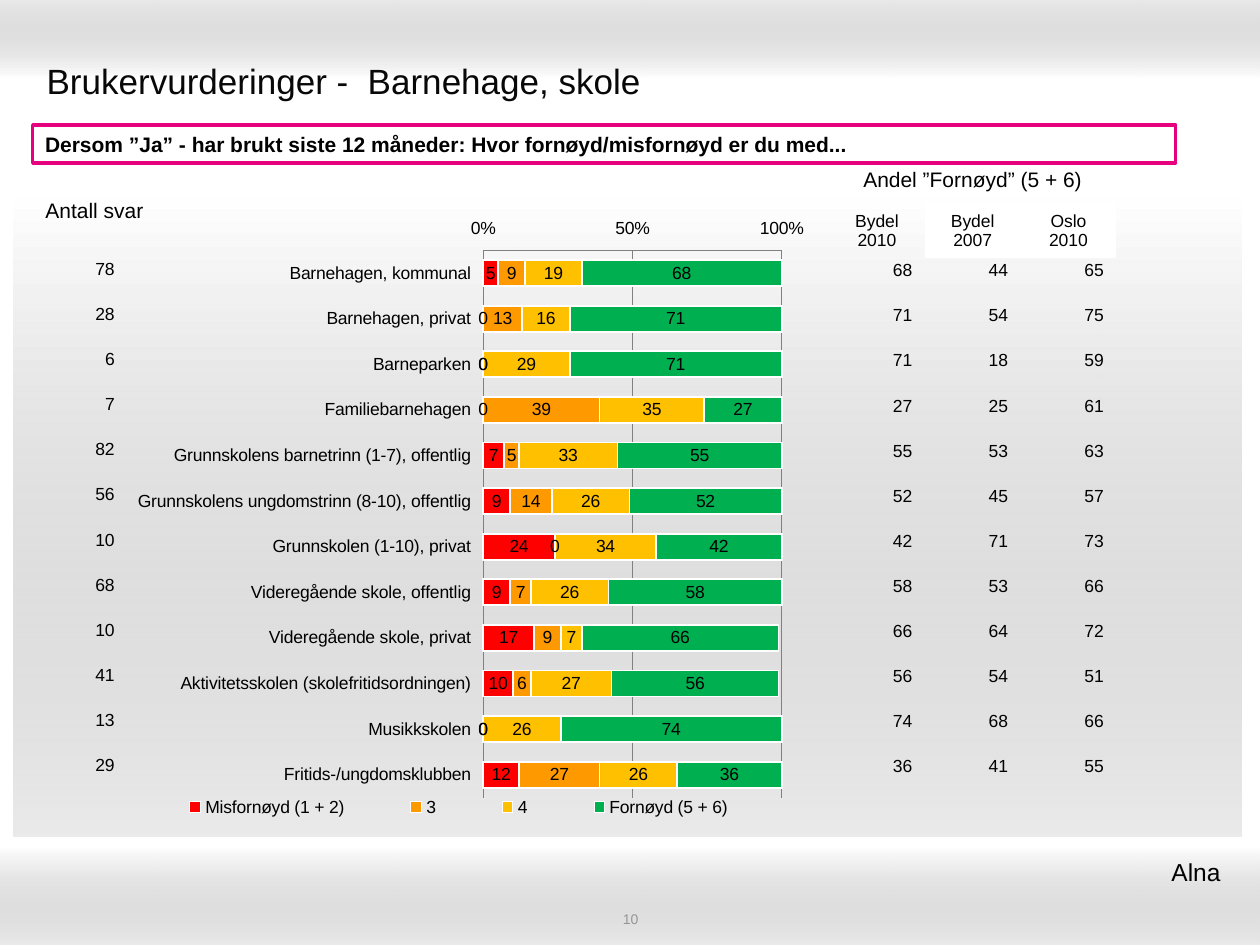
from dataclasses import dataclass

from lxml import etree
from pptx import Presentation, util as u
from pptx.chart.data import CategoryChartData
from pptx.dml.color import RGBColor
from pptx.enum import chart as ch, shapes, text
from pptx.oxml.ns import qn

CELL = 0.1  # the slide is a grid of 100 columns by 75 rows
ROW = 3.58  # height of one answer row
COL = 7.6  # width of one share column
LEFT, CENTER, RIGHT = text.PP_ALIGN.LEFT, text.PP_ALIGN.CENTER, text.PP_ALIGN.RIGHT
NO_STYLE = "{2D5ABB26-0587-4C30-8999-92F81FD0307C}"


@dataclass(frozen=True)
class Theme:
    font: str = "Arial"
    ink: str = "000000"
    title_ink: str = "080808"
    muted: str = "969696"
    white: str = "FFFFFF"
    shade: str = "999999"
    accent: str = "E7007E"
    grid: str = "808080"
    title: int = 20
    place: int = 14
    heading: int = 12
    body: int = 10
    small: int = 8


T = Theme()

# label, number of answers, chart shares, earlier and city-wide satisfied shares
ANSWERS = [
    ("Barnehagen, kommunal", 78, (5, 9, 19, 68), (44, 65)),
    ("Barnehagen, privat", 28, (0, 13, 16, 71), (54, 75)),
    ("Barneparken", 6, (0, 0, 29, 71), (18, 59)),
    ("Familiebarnehagen", 7, (0, 39, 35, 27), (25, 61)),
    ("Grunnskolens barnetrinn (1-7), offentlig", 82, (7, 5, 33, 55), (53, 63)),
    ("Grunnskolens ungdomstrinn (8-10), offentlig", 56, (9, 14, 26, 52), (45, 57)),
    ("Grunnskolen (1-10), privat", 10, (24, 0, 34, 42), (71, 73)),
    ("Videregående skole, offentlig", 68, (9, 7, 26, 58), (53, 66)),
    ("Videregående skole, privat", 10, (17, 9, 7, 66), (64, 72)),
    ("Aktivitetsskolen (skolefritidsordningen)", 41, (10, 6, 27, 56), (54, 51)),
    ("Musikkskolen", 13, (0, 0, 26, 74), (68, 66)),
    ("Fritids-/ungdomsklubben", 29, (12, 27, 26, 36), (41, 55)),
]
SERIES = [("Misfornøyd (1 + 2)", "FF0000"), ("3", "FF9900"),
          ("4", "FFC000"), ("Fornøyd (5 + 6)", "00B050")]


def box(*cells):
    return [u.Inches(c * CELL) for c in cells]


def rgb(value):
    return RGBColor.from_string(value)


def set_all(obj, **values):
    for name, value in values.items():
        setattr(obj, name, value)


def style_font(font, size, color=T.ink, bold=False):
    set_all(font, name=T.font, size=u.Pt(size), bold=bold)
    font.color.rgb = rgb(color)


def write(tf, words, size, color=T.ink, align=LEFT, bold=False):
    tf.text = words
    set_all(tf, word_wrap=True, vertical_anchor=text.MSO_ANCHOR.MIDDLE)
    for p in tf.paragraphs:
        p.alignment = align
        style_font(p.font, size, color, bold)


def add_rect(s, at):
    sp = s.shapes.add_shape(shapes.MSO_SHAPE.RECTANGLE, *box(*at))
    sp.shadow.inherit = False
    return sp


def add_band(s, at, angle):
    """Add a rectangle fading from white to translucent grey."""
    sp = add_rect(s, at)
    sp.line.fill.background()
    sp.fill.gradient()
    sp.fill.gradient_angle = angle
    for stop, color, position in zip(sp.fill.gradient_stops, (T.white, T.shade), (0, 1)):
        stop.color.rgb = rgb(color)
        stop.position = position
    last = sp.fill._fill._gradFill.findall(".//" + qn("a:srgbClr"))[-1]
    etree.SubElement(last, qn("a:alpha"), val="20000")


def add_title(s, at, words):
    """Fill the title placeholder and lift it above the bands."""
    title = s.shapes.title
    title.left, title.top, title.width, title.height = box(*at)
    write(title.text_frame, words, T.title, T.title_ink)
    s.shapes._spTree.append(title._element)


def add_text(s, at, words, size, **look):
    write(s.shapes.add_textbox(*box(*at)).text_frame, words, size, **look)


def add_grid(s, at, rows, heights, align, size=T.body):
    left, top, width = at
    frame = s.shapes.add_table(len(rows), len(rows[0]),
                               *box(left, top, width, sum(heights)))
    table = frame.table
    set_all(table, first_row=False, horz_banding=False)
    table._tbl.tblPr.find(qn("a:tableStyleId")).text = NO_STYLE
    for row, height, values in zip(table.rows, heights, rows):
        row.height = u.Inches(height * CELL)
        for cell, value in zip(row.cells, values):
            cell.fill.background()
            cell.vertical_anchor = text.MSO_ANCHOR.MIDDLE
            write(cell.text_frame, str(value), size, align=align)
    return table


def add_share_header(s):
    labels = ["Bydel\n2010", "Bydel\n2007", "Oslo\n2010"]
    table = add_grid(s, (65.8, 12.45, 3 * COL), [["", "", ""], labels], (3.7, 4.3), CENTER)
    heading = table.cell(0, 0)
    heading.merge(table.cell(0, 2))
    write(heading.text_frame, "Andel ”Fornøyd” (5 + 6)", T.heading, align=CENTER)
    for col in (1, 2):
        fill = table.cell(1, col).fill
        fill.solid()
        fill.fore_color.rgb = rgb(T.white)


def place(parent, x, y, w, h, inner=False):
    """Fix a chart part at shares of the chart's size."""
    layout = parent.find(qn("c:layout"))
    if layout is None:
        layout = etree.Element(qn("c:layout"))
        before = parent.find(qn("c:legendPos"))
        if before is None:
            parent.insert(0, layout)
        else:
            before.addnext(layout)
    manual = etree.SubElement(layout, qn("c:manualLayout"))
    parts = [("layoutTarget", "inner")] if inner else []
    parts += [("xMode", "edge"), ("yMode", "edge"), ("x", x), ("y", y), ("w", w), ("h", h)]
    for name, value in parts:
        etree.SubElement(manual, qn("c:" + name), val=str(value))


def style_axes(chart):
    cat, val = chart.category_axis, chart.value_axis
    low, none = ch.XL_TICK_LABEL_POSITION.LOW, ch.XL_TICK_MARK.NONE
    set_all(cat, reverse_order=True, tick_label_position=low,
            major_tick_mark=none, minor_tick_mark=none)
    set_all(val, minimum_scale=0, maximum_scale=100, major_unit=50,
            tick_label_position=low, has_major_gridlines=True,
            major_tick_mark=ch.XL_TICK_MARK.INSIDE, minor_tick_mark=none)
    set_all(val.tick_labels, number_format="General\\%", number_format_is_linked=False)
    for line in (cat.format.line, val.format.line, val.major_gridlines.format.line):
        line.color.rgb = rgb(T.grid)
        line.width = u.Pt(0.75)


def add_satisfaction_chart(s):
    data = CategoryChartData()
    data.categories = [answer[0] for answer in ANSWERS]
    for i, (name, _) in enumerate(SERIES):
        data.add_series(name, [answer[2][i] for answer in ANSWERS])
    chart = s.shapes.add_chart(ch.XL_CHART_TYPE.BAR_STACKED,
                               *box(9.7, 16.3, 55.1, 51.1), data).chart
    style_font(chart.font, T.body)
    set_all(chart, has_title=False, has_legend=True)
    set_all(chart.legend, position=ch.XL_LEGEND_POSITION.BOTTOM, include_in_layout=False)
    style_axes(chart)
    plot = chart.plots[0]
    set_all(plot, gap_width=75, overlap=100, vary_by_categories=False)
    for series, (_, color) in zip(plot.series, SERIES):
        series.format.fill.solid()
        series.format.fill.fore_color.rgb = rgb(color)
        series.format.line.color.rgb = rgb(T.white)
        series.format.line.width = u.Pt(1)
        set_all(series.data_labels, show_value=True, number_format="0",
                number_format_is_linked=False)
        style_font(series.data_labels.font, T.body)
    place(chart._chartSpace.chart.plotArea, 0.52, 0.07, 0.43, 0.85, inner=True)
    place(chart.legend._element, 0.01, 0.91, 0.95, 0.05)


def main():
    prs = Presentation()
    prs.slide_width, prs.slide_height = box(100, 75)
    s = prs.slides.add_slide(prs.slide_layouts[5])
    add_band(s, (0, 0, 100, 6.2), 90)
    add_band(s, (0, 67.2, 100, 7.8), 270)
    add_band(s, (1.1, 15.6, 97.4, 50.8), 270)
    add_title(s, (2.7, 3.6, 94.5, 5.5), "Brukervurderinger -  Barnehage, skole")
    add_text(s, (34.2, 72.2, 31.7, 1.4), "10", T.small, color=T.muted, align=CENTER)

    question = add_rect(s, (2.6, 9.9, 90.7, 3.05))
    question.fill.solid()
    question.fill.fore_color.rgb = rgb(T.white)
    question.line.color.rgb = rgb(T.accent)
    question.line.width = u.Pt(2)
    write(question.text_frame, "Dersom ”Ja” - har brukt siste 12 måneder: "
          "Hvor fornøyd/misfornøyd er du med...", T.heading, bold=True)

    add_satisfaction_chart(s)
    heights = [ROW] * len(ANSWERS)
    shares = [(now[-1], *others) for _, _, now, others in ANSWERS]
    add_grid(s, (65.8, 19.7, 3 * COL), shares, heights, RIGHT)
    add_share_header(s)
    add_grid(s, (0.4, 13.8, 14.2), [["Antall svar"]], [5.9], CENTER, T.heading)
    add_text(s, (61, 67.5, 37.4, 3.4), "Alna ", T.place, align=RIGHT)
    add_grid(s, (3, 19.6, 7.1), [[answer[1]] for answer in ANSWERS], heights, RIGHT)
    prs.save("out.pptx")


if __name__ == "__main__":
    main()
